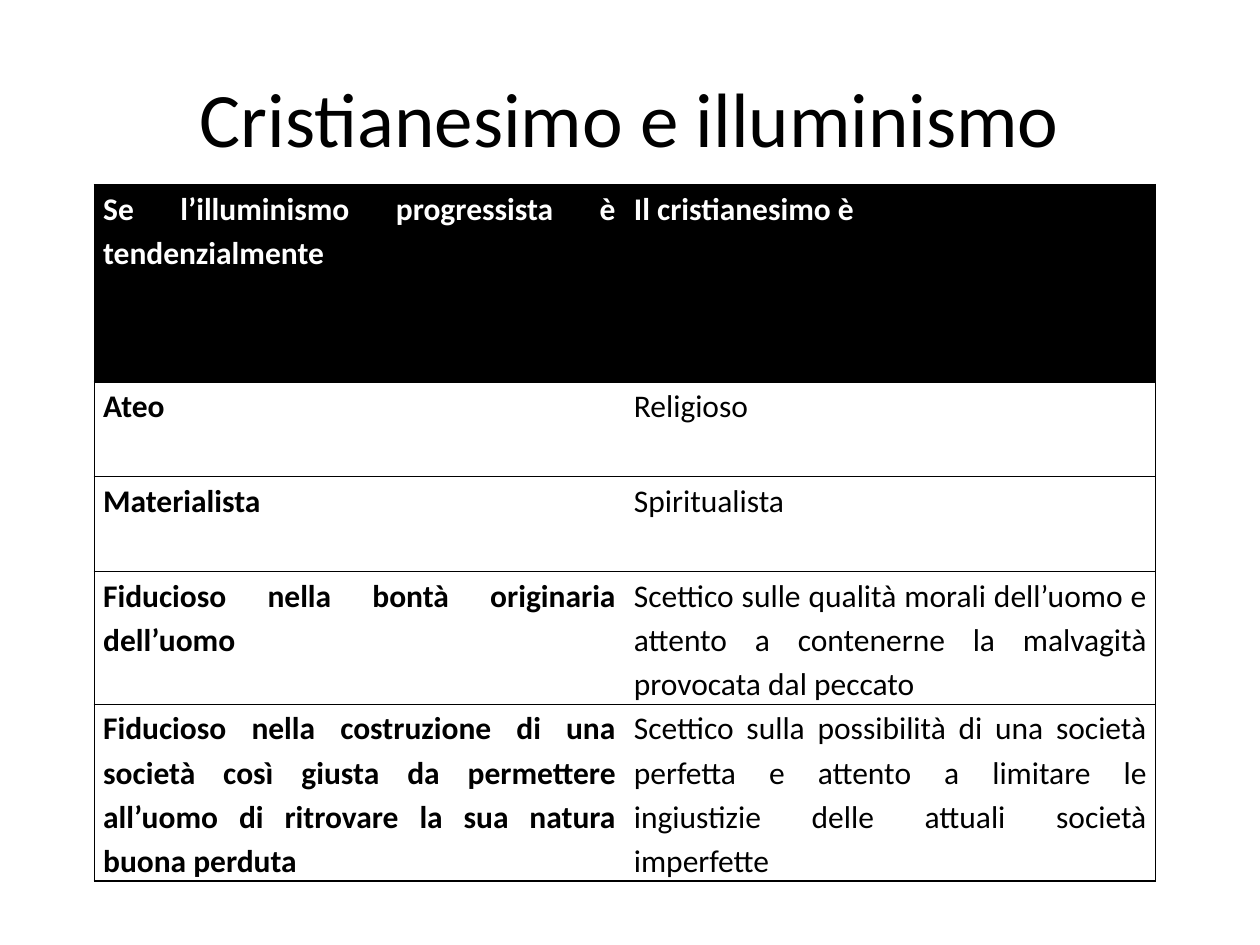
"""Build the slide comparing Christianity and the Enlightenment."""
import pptx
import pptx.dml.color
import pptx.enum.text
import pptx.oxml
import pptx.oxml.ns
import pptx.util

Cm = pptx.util.Cm
Pt = pptx.util.Pt
BLACK, WHITE = "000000", "FFFFFF"
TITLE = "Cristianesimo e illuminismo"
ROWS = [
    ("Se l’illuminismo progressista è tendenzialmente", "Il cristianesimo è"),
    ("Ateo", "Religioso"),
    ("Materialista", "Spiritualista"),
    ("Fiducioso nella bontà originaria dell’uomo",
     "Scettico sulle qualità morali dell’uomo e attento a contenerne la malvagità "
     "provocata dal peccato"),
    ("Fiducioso nella costruzione di una società così giusta da permettere all’uomo "
     "di ritrovare la sua natura buona perduta",
     "Scettico sulla possibilità di una società perfetta e attento a limitare le "
     "ingiustizie delle attuali società imperfette"),
]
ROW_HEIGHTS = [3.98, 1.91, 1.91, 2.54, 3.4]
COLUMN_WIDTH = 10.7
TABLE_LEFT, TABLE_TOP = 1.9, 3.72
TITLE_BOX = {"left": Cm(1.27), "top": Cm(0.76), "width": Cm(22.86), "height": Cm(3.18)}
CELL_FORMAT = {"margin_left": Cm(0.18), "margin_right": Cm(0.18),
               "margin_top": Cm(0), "margin_bottom": Cm(0),
               "vertical_anchor": pptx.enum.text.MSO_ANCHOR.TOP}


def apply_format(target, values):
    """Set every attribute in values on target."""
    for name, value in values.items():
        setattr(target, name, value)


def color(hex_value):
    """Return the colour for a hex string."""
    return pptx.dml.color.RGBColor.from_string(hex_value)


def write_text(text_frame, text, alignment, spacing, size, bold, text_color):
    """Write one formatted paragraph."""
    text_frame.text = text
    paragraph = text_frame.paragraphs[0]
    apply_format(paragraph, {"alignment": alignment, "line_spacing": spacing})
    font = paragraph.runs[0].font
    apply_format(font, {"name": "Calibri", "size": Pt(size), "bold": bold})
    font.color.rgb = color(text_color)


def set_borders(cell, visible_sides):
    """Draw the visible sides of a cell and hide the others."""
    properties = cell._tc.get_or_add_tcPr()
    for index, side in enumerate("LRTB"):
        fill = (f'<a:solidFill><a:srgbClr val="{BLACK}"/></a:solidFill>'
                if side in visible_sides else "<a:noFill/>")
        line = pptx.oxml.parse_xml(
            f'<a:ln{side} {pptx.oxml.ns.nsdecls("a")} w="{Pt(0.75)}">{fill}</a:ln{side}>')
        properties.insert(index, line)


def add_title(slide):
    """Place and format the title."""
    title = slide.shapes.title
    apply_format(title, TITLE_BOX)
    write_text(title.text_frame, TITLE, pptx.enum.text.PP_ALIGN.CENTER, 1, 44, False, BLACK)
    title.text_frame.vertical_anchor = pptx.enum.text.MSO_ANCHOR.MIDDLE


def add_comparison(slide):
    """Add the two-column comparison table."""
    table = slide.shapes.add_table(
        len(ROWS), 2, Cm(TABLE_LEFT), Cm(TABLE_TOP),
        Cm(2 * COLUMN_WIDTH), Cm(sum(ROW_HEIGHTS))).table
    apply_format(table, {"first_row": False, "horz_banding": False})
    for column in table.columns:
        column.width = Cm(COLUMN_WIDTH)
    for row_index, (texts, height) in enumerate(zip(ROWS, ROW_HEIGHTS)):
        table.rows[row_index].height = Cm(height)
        header = row_index == 0
        for column_index, text in enumerate(texts):
            cell = table.cell(row_index, column_index)
            apply_format(cell, CELL_FORMAT)
            cell.fill.solid()
            cell.fill.fore_color.rgb = color(BLACK if header else WHITE)
            write_text(cell.text_frame, text, pptx.enum.text.PP_ALIGN.JUSTIFY, 1.15, 18,
                       header or column_index == 0, WHITE if header else BLACK)
            set_borders(cell, "LTB" if column_index == 0 else "RTB")


def main():
    """Build and save the presentation."""
    presentation = pptx.Presentation()
    apply_format(presentation, {"slide_width": Cm(25.4), "slide_height": Cm(19.05)})
    slide = presentation.slides.add_slide(presentation.slide_layouts[5])
    add_title(slide)
    add_comparison(slide)
    presentation.save("out.pptx")


if __name__ == "__main__":
    main()
